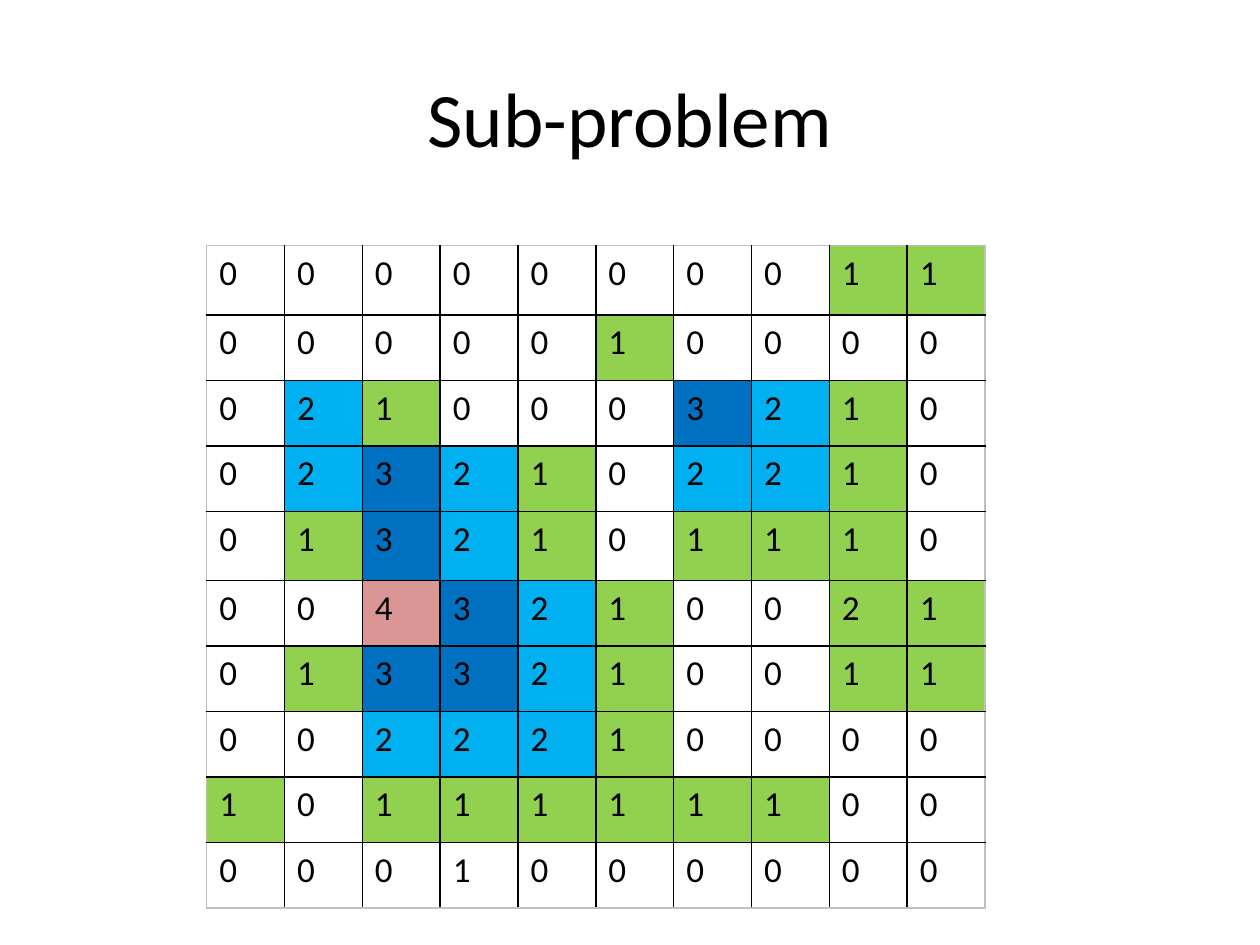
from lxml.etree import SubElement
from pptx import Presentation
from pptx.dml.color import RGBColor as RGB
from pptx.enum.text import MSO_ANCHOR as ANCHOR, PP_ALIGN as ALIGN
from pptx.oxml.ns import qn
from pptx.util import Inches, Pt

COLORS = {"text": "000000", "inner": "000000", "outer": "BFBFBF",
          "1": "92D050", "2": "00B0F0", "3": "0070C0", "4": "D99694"}

# Side length of the largest square of free cells starting at each cell
SQUARE_SIZES = [
    "0000000011",
    "0000010000",
    "0210003210",
    "0232102210",
    "0132101110",
    "0043210021",
    "0133210011",
    "0022210000",
    "1011111100",
    "0001000000",
]
# Cells coloured differently from their number: (row, column) -> colour key
EXCEPTIONS = {(5, 8): "1", (9, 3): "0"}
COL_WIDTH, ROW_HEIGHT, TALL_ROW = 0.618, 0.52, 0.55
TALL_ROWS = {0, 4}


def style_run(paragraph, size):
    font = paragraph.runs[0].font
    font.name, font.size = "Calibri", Pt(size)
    font.color.rgb = RGB.from_string(COLORS["text"])


def add_border(cell, side, color):
    line = SubElement(cell._tc.get_or_add_tcPr(), qn(f"a:{side}"), w=str(Pt(1)))
    fill = SubElement(line, qn("a:solidFill"))
    SubElement(fill, qn("a:srgbClr"), val=color)


prs = Presentation()
prs.slide_width, prs.slide_height = Inches(10), Inches(7.5)
slide = prs.slides.add_slide(prs.slide_layouts[6])

# Title
title = slide.shapes.add_textbox(Inches(0.5), Inches(0.3), Inches(9), Inches(1.25)).text_frame
title.word_wrap = True
title.vertical_anchor = ANCHOR.MIDDLE
title.text = "Sub-problem"
title.paragraphs[0].alignment = ALIGN.CENTER
style_run(title.paragraphs[0], 44)

# Grid of square sizes
n = len(SQUARE_SIZES)
grid = slide.shapes.add_table(n, n, Inches(1.64), Inches(1.95),
                              Inches(n * COL_WIDTH), Inches(5.25)).table
grid.first_row = grid.horz_banding = False
for column in grid.columns:
    column.width = Inches(COL_WIDTH)

for r, sizes in enumerate(SQUARE_SIZES):
    grid.rows[r].height = Inches(TALL_ROW if r in TALL_ROWS else ROW_HEIGHT)
    for c, size in enumerate(sizes):
        cell = grid.cell(r, c)
        cell.text = size
        style_run(cell.text_frame.paragraphs[0], 20)

        # Borders come before the fill in the cell properties
        edges = {"lnL": c == 0, "lnR": c == n - 1, "lnT": r == 0, "lnB": r == n - 1}
        for side, is_outer in edges.items():
            add_border(cell, side, COLORS["outer" if is_outer else "inner"])

        color_key = EXCEPTIONS.get((r, c), size)
        if color_key in COLORS:
            cell.fill.solid()
            cell.fill.fore_color.rgb = RGB.from_string(COLORS[color_key])
        else:
            cell.fill.background()

prs.save("out.pptx")
